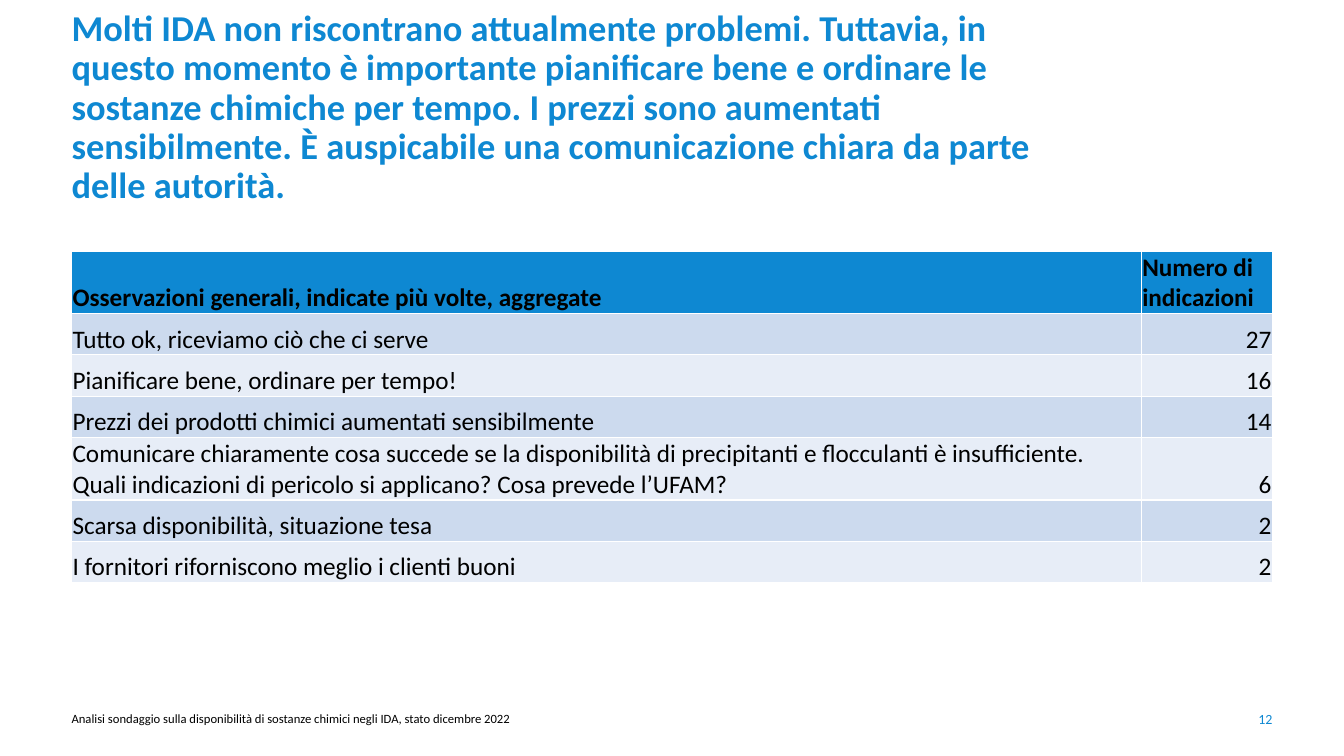
from pptx import Presentation
from pptx.dml.color import RGBColor
from pptx.enum.text import MSO_ANCHOR, MSO_AUTO_SIZE, PP_ALIGN
from pptx.util import Inches, Pt

BLUE = RGBColor(0x0E, 0x88, 0xD2)
BLACK = RGBColor(0, 0, 0)
BAND_DARK = RGBColor(0xCC, 0xDA, 0xEE)
BAND_LIGHT = RGBColor(0xE7, 0xED, 0xF7)

LEFT, CONTENT_WIDTH = 0.71, 11.91
COUNT_WIDTH, ROW_HEIGHT = 1.3, 0.41

HEADLINE = (
    "Molti IDA non riscontrano attualmente problemi. Tuttavia, in questo momento "
    "è importante pianificare bene e ordinare le sostanze chimiche per tempo. "
    "I prezzi sono aumentati sensibilmente. È auspicabile una comunicazione chiara "
    "da parte delle autorità."
)
HEADER = ("Osservazioni generali, indicate più volte, aggregate", "Numero di indicazioni")
OBSERVATIONS = [
    ("Tutto ok, riceviamo ciò che ci serve", 27),
    ("Pianificare bene, ordinare per tempo!", 16),
    ("Prezzi dei prodotti chimici aumentati sensibilmente", 14),
    ("Comunicare chiaramente cosa succede se la disponibilità di precipitanti e "
     "flocculanti è insufficiente. Quali indicazioni di pericolo si applicano? "
     "Cosa prevede l’UFAM?", 6),
    ("Scarsa disponibilità, situazione tesa", 2),
    ("I fornitori riforniscono meglio i clienti buoni", 2),
]
SOURCE = "Analisi sondaggio sulla disponibilità di sostanze chimici negli IDA, stato dicembre 2022"


def write(frame, text, size, color, bold=False, align=PP_ALIGN.LEFT):
    paragraph = frame.paragraphs[0]
    paragraph.alignment = align
    run = paragraph.add_run()
    run.text = text
    run.font.name = "Calibri"
    run.font.size = Pt(size)
    run.font.bold = bold
    run.font.color.rgb = color
    return paragraph


def clear_insets(frame):
    frame.margin_left = frame.margin_right = frame.margin_top = frame.margin_bottom = 0
    frame.word_wrap = True
    frame.auto_size = MSO_AUTO_SIZE.NONE


def add_headline(slide, left, top, width, height):
    """Fill the title, which grows upwards from the bottom of its box."""
    title = slide.shapes.title
    title.left, title.top = Inches(left), Inches(top)
    title.width, title.height = Inches(width), Inches(height)
    frame = title.text_frame
    clear_insets(frame)
    frame.vertical_anchor = MSO_ANCHOR.BOTTOM
    write(frame, HEADLINE, 26, BLUE, bold=True).line_spacing = 0.9


def fill_cell(cell, text, fill, bold, align):
    cell.margin_left = cell.margin_right = cell.margin_top = Inches(0.01)
    cell.margin_bottom = 0
    cell.vertical_anchor = MSO_ANCHOR.BOTTOM
    cell.fill.solid()
    cell.fill.fore_color.rgb = fill
    write(cell.text_frame, text, 18, BLACK, bold, align)


def add_observations(slide, left, top, width):
    rows = [HEADER, *OBSERVATIONS]
    table = slide.shapes.add_table(
        len(rows), 2, Inches(left), Inches(top),
        Inches(width), Inches(ROW_HEIGHT * len(rows))).table
    table.columns[0].width = Inches(width - COUNT_WIDTH)
    table.columns[1].width = Inches(COUNT_WIDTH)
    for index, (observation, count) in enumerate(rows):
        table.rows[index].height = Inches(ROW_HEIGHT)
        is_header = index == 0
        fill = BLUE if is_header else BAND_DARK if index % 2 else BAND_LIGHT
        count_align = PP_ALIGN.LEFT if is_header else PP_ALIGN.RIGHT
        fill_cell(table.cell(index, 0), observation, fill, is_header, PP_ALIGN.LEFT)
        fill_cell(table.cell(index, 1), str(count), fill, is_header, count_align)


def add_footer(slide, left, top, width, height):
    number_width = 0.82
    parts = [
        (left, 8.61, SOURCE, 9, BLACK, PP_ALIGN.LEFT),
        (left + width - number_width, number_width, "12", 10, BLUE, PP_ALIGN.RIGHT),
    ]
    for part_left, part_width, text, size, color, align in parts:
        box = slide.shapes.add_textbox(
            Inches(part_left), Inches(top), Inches(part_width), Inches(height))
        clear_insets(box.text_frame)
        write(box.text_frame, text, size, color, align=align)


def main():
    deck = Presentation()
    deck.slide_width, deck.slide_height = Inches(13.33), Inches(7.5)
    slide = deck.slides.add_slide(deck.slide_layouts.get_by_name("Title Only"))
    add_headline(slide, LEFT, 1.16, 9.73, 0.89)
    add_observations(slide, LEFT, 2.49, CONTENT_WIDTH)
    add_footer(slide, LEFT, 7.05, CONTENT_WIDTH, 0.16)
    deck.save("out.pptx")


if __name__ == "__main__":
    main()
